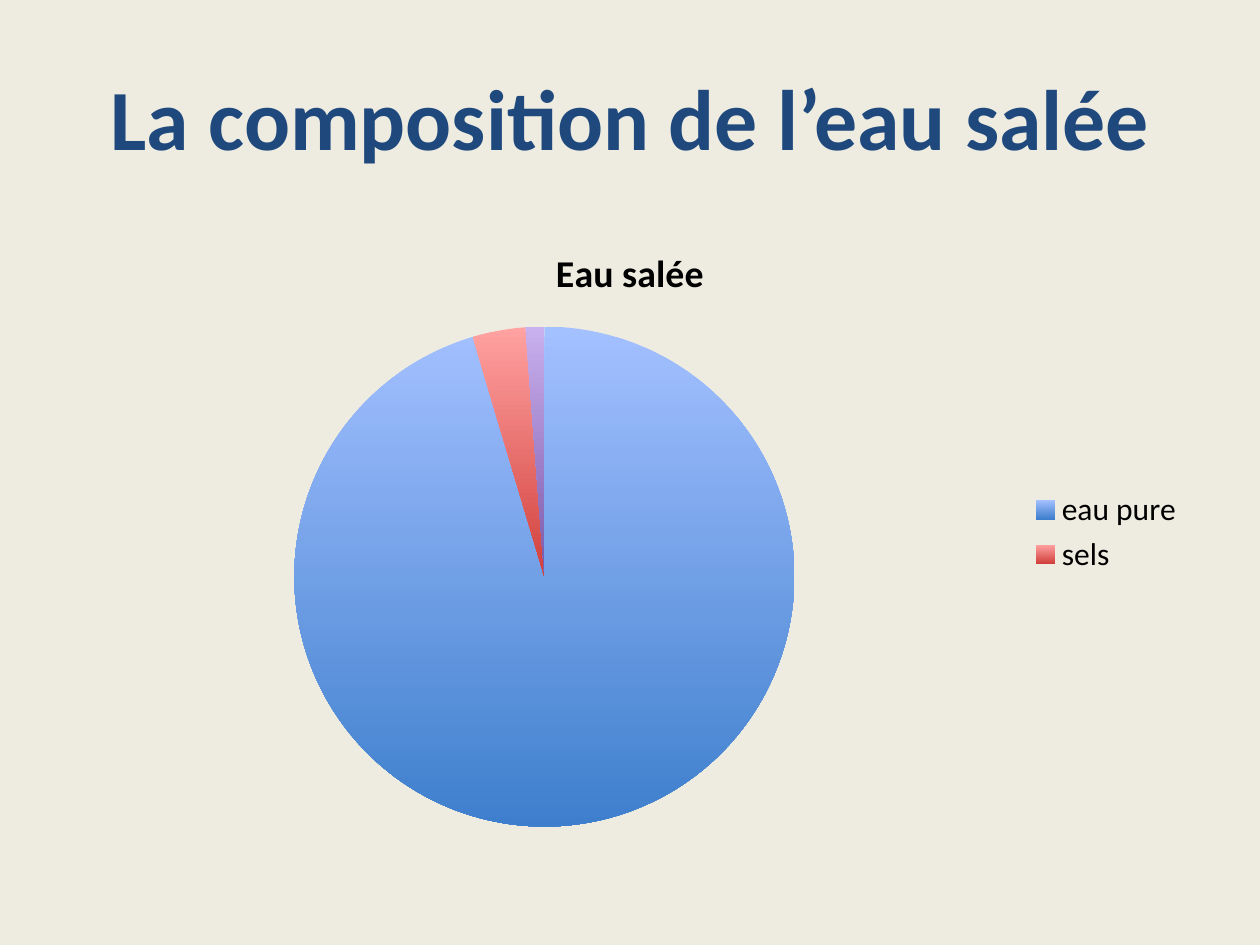
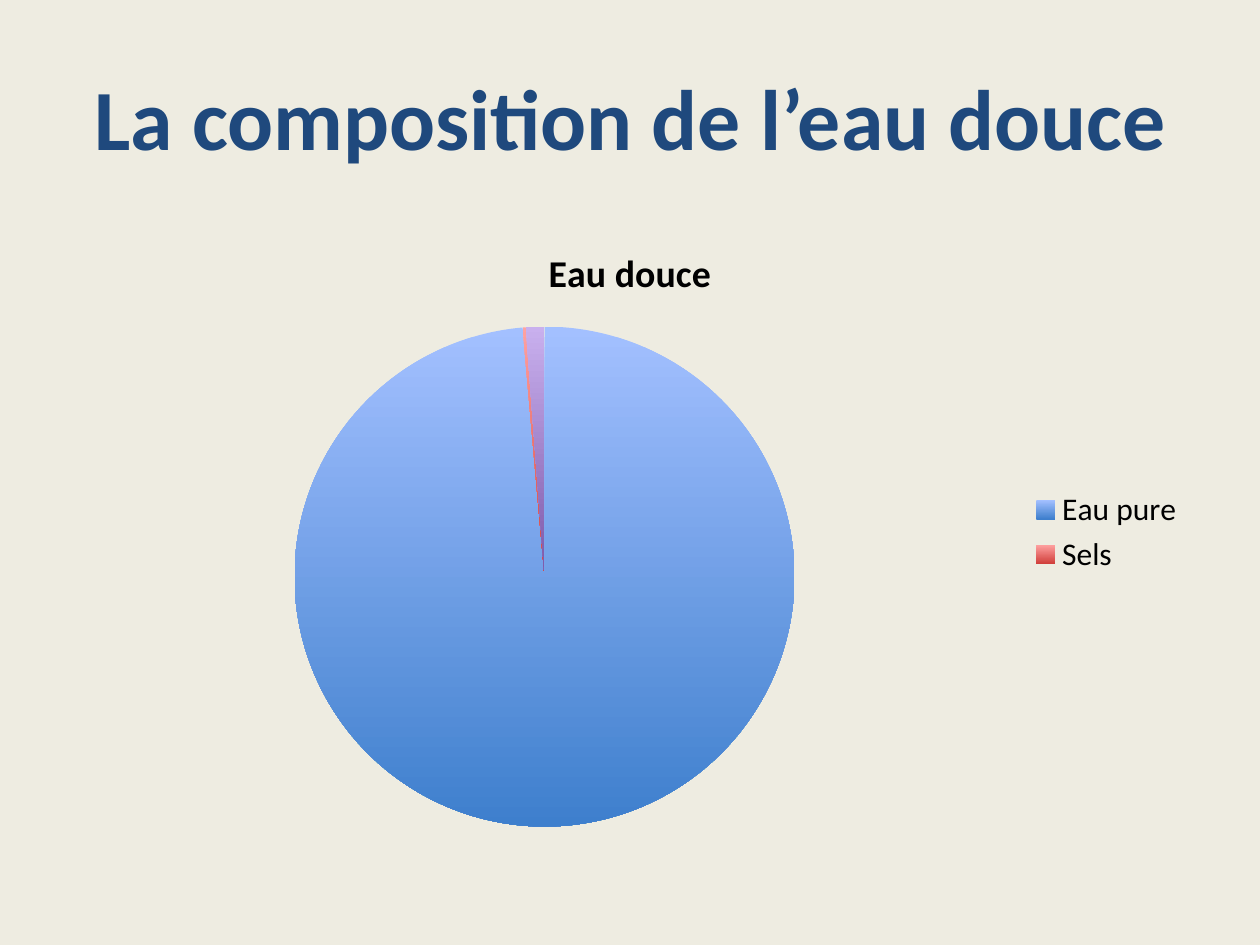
from lxml.etree import SubElement
from pptx import Presentation
from pptx.chart.data import CategoryChartData
from pptx.dml.color import RGBColor
from pptx.enum.chart import XL_CHART_TYPE, XL_LEGEND_POSITION
from pptx.enum.text import MSO_ANCHOR, PP_ALIGN
from pptx.oxml.ns import qn
from pptx.util import Emu, Pt

PX = 914400 // 126
FONT = "Calibri"
COLORS = {"back": "EEECE1", "title": "1F497D", "text": "000000"}
# Light top and dark foot of each slice
SLICES = [("A3C0FF", "3E7FCD"), ("FFA2A1", "D1403C"),
          ("D5F2A0", "9BC348"), ("C9B0EE", "7B57A8")]
TITLE_BOX = (63, 38, 1134, 157)
CHART_BOX = (63, 220, 1134, 624)

SLIDES = [
    {"title": "La composition de l’eau salée", "chart": "Eau salée",
     "names": ["eau pure", "sels"], "values": [95, 3.4, None, 1.2]},
    {"title": "La composition de l’eau douce", "chart": "Eau douce",
     "names": ["Eau pure", "Sels"], "values": [99, 0.2, None, 1.2]},
]


def scale(box):
    return [Emu(n * PX) for n in box]


def style(font, size, color, bold=False):
    font.name, font.size, font.bold = FONT, Pt(size), bold
    font.color.rgb = RGBColor.from_string(COLORS[color])


def add_title(slide, text):
    title = slide.shapes.title
    title.left, title.top, title.width, title.height = scale(TITLE_BOX)
    frame = title.text_frame
    frame.text = text
    frame.vertical_anchor = MSO_ANCHOR.MIDDLE
    para = frame.paragraphs[0]
    para.alignment = PP_ALIGN.CENTER
    style(para.font, 49, "title", True)


def shade(fill, tones):
    fill.gradient()
    fill.gradient_angle = 270
    for stop, tone in zip(fill.gradient_stops, tones):
        stop.color.rgb = RGBColor.from_string(tone)


def hide_keys(legend, keys):
    """Drop the legend entries of slices that have no name."""
    root = legend._element
    for spot, key in enumerate(keys, 1):
        entry = SubElement(root, qn("c:legendEntry"))
        SubElement(entry, qn("c:idx")).set("val", str(key))
        SubElement(entry, qn("c:delete")).set("val", "1")
        root.insert(spot, entry)


def add_pie(slide, name, names, values):
    data = CategoryChartData()
    data.categories = names + [""] * (len(values) - len(names))
    data.add_series(name, values)
    chart = slide.shapes.add_chart(
        XL_CHART_TYPE.PIE, *scale(CHART_BOX), data).chart
    style(chart.font, 18, "text")

    chart.has_title = True
    head = chart.chart_title
    head.include_in_layout = False
    head.text_frame.text = name
    style(head.text_frame.paragraphs[0].font, 21.6, "text", True)

    chart.has_legend = True
    legend = chart.legend
    legend.position = XL_LEGEND_POSITION.RIGHT
    legend.include_in_layout = False
    style(legend.font, 18, "text")
    hide_keys(legend, range(len(names), len(values)))

    plot = chart.plots[0]
    plot.vary_by_categories = True
    for spot, tones in enumerate(SLICES):
        look = plot.series[0].points[spot].format
        shade(look.fill, tones)
        look.line.fill.background()


def main():
    deck = Presentation()
    deck.slide_width, deck.slide_height = scale((1260, 945))
    for part in SLIDES:
        slide = deck.slides.add_slide(deck.slide_layouts[5])
        back = slide.background.fill
        back.solid()
        back.fore_color.rgb = RGBColor.from_string(COLORS["back"])
        add_title(slide, part["title"])
        add_pie(slide, part["chart"], part["names"], part["values"])
    deck.save("out.pptx")


if __name__ == "__main__":
    main()
